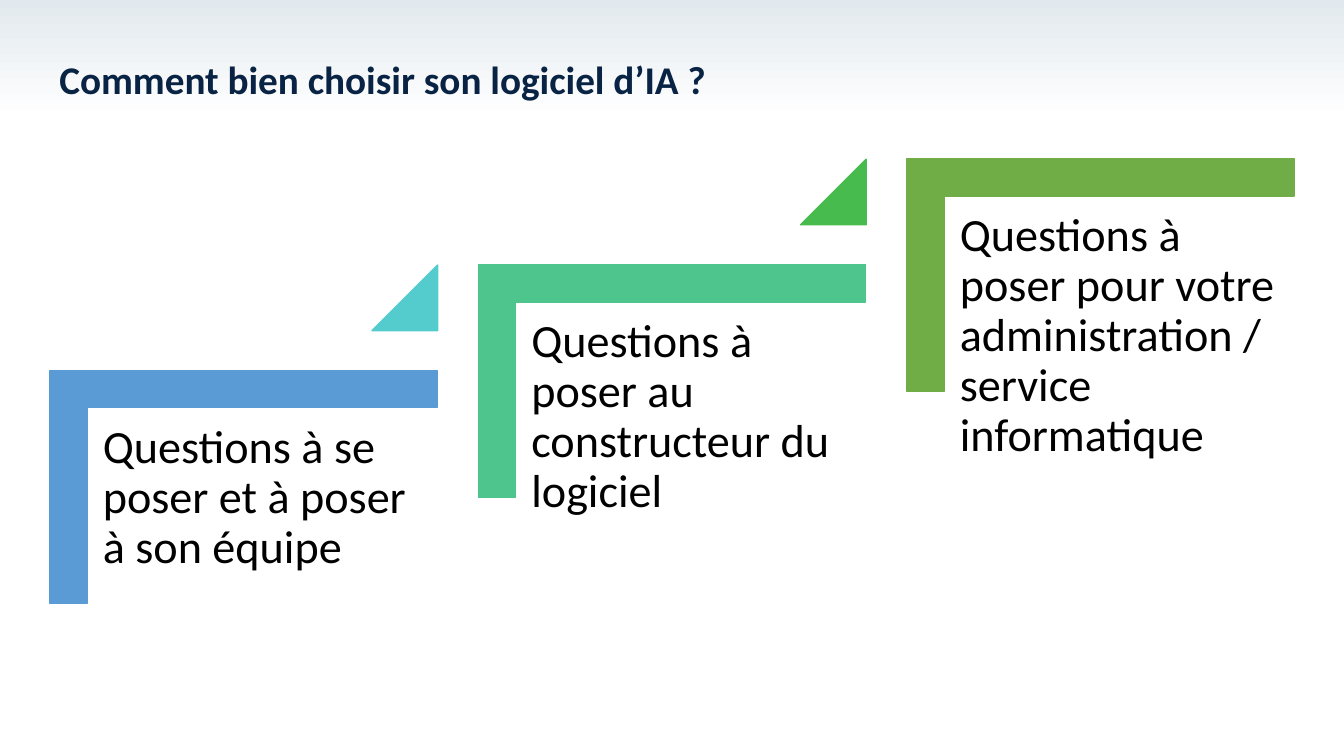
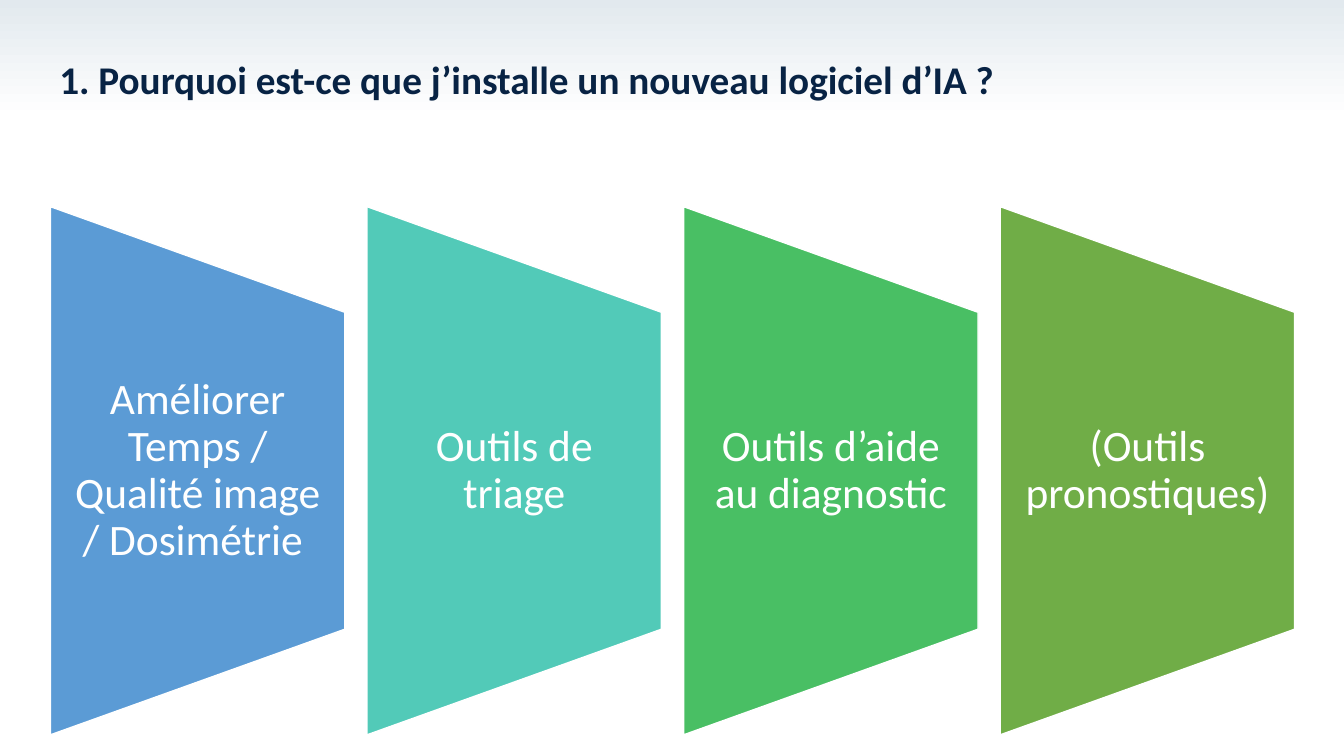
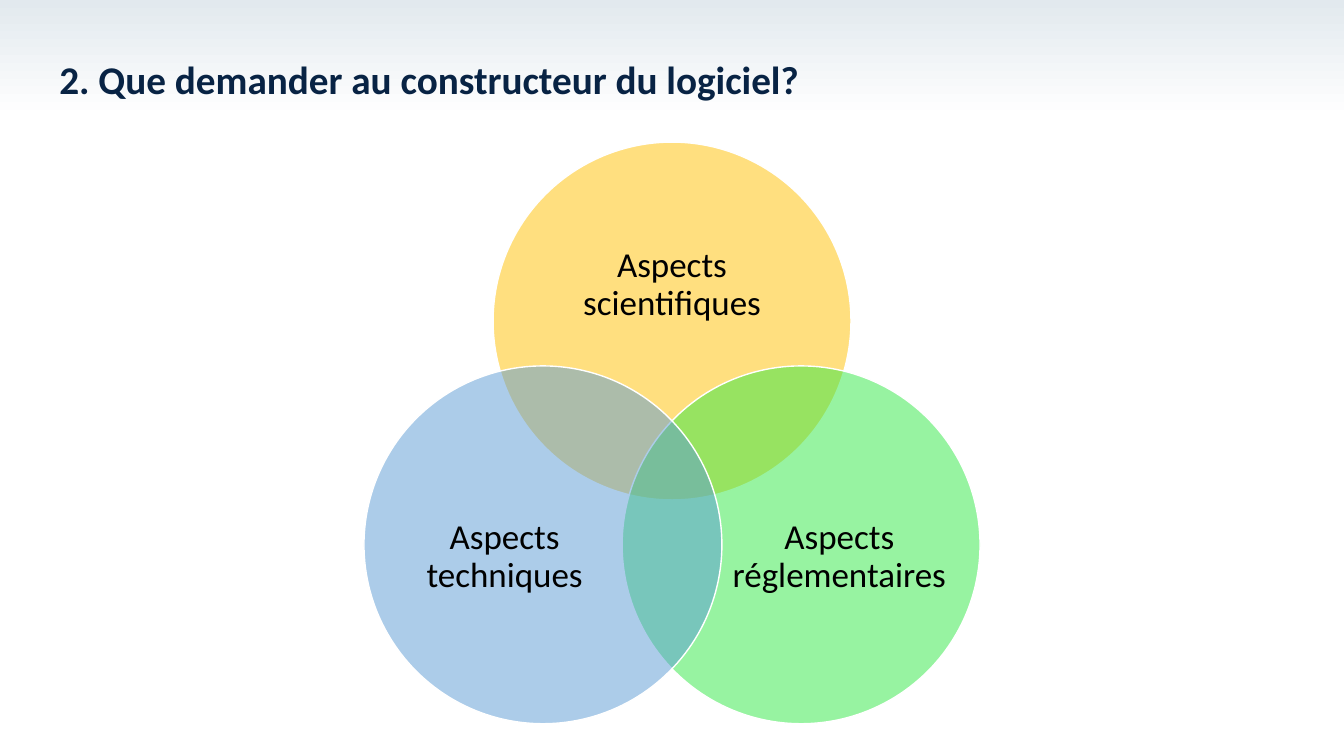
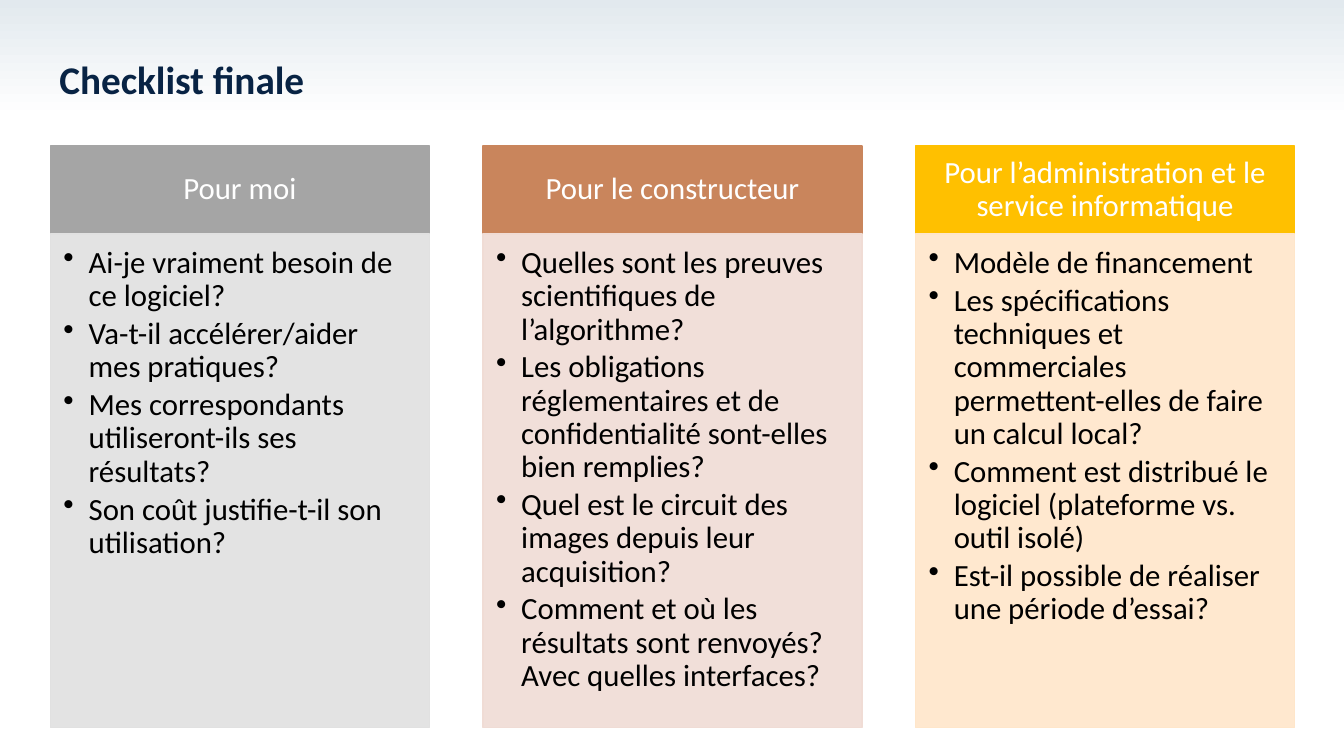
"""Build four slides on choosing AI software."""
from pptx import Presentation
from pptx import util as u
from pptx.dml.color import RGBColor
from pptx.enum import shapes, text
from pptx.oxml import ns, xmlchemy

KIND = shapes.MSO_SHAPE
TOP, MID, LOW = text.MSO_ANCHOR.TOP, text.MSO_ANCHOR.MIDDLE, text.MSO_ANCHOR.BOTTOM
LEFT, CENTER = text.PP_ALIGN.LEFT, text.PP_ALIGN.CENTER
HUE = {
    "navy": "082344", "mist": "E2E9EE", "white": "FFFFFF", "black": "000000",
    "blue": "5B9BD5", "cyan": "54CCCD", "jade": "4DC58D", "leaf": "48BB4F",
    "olive": "70AD47", "teal": "52CAB8", "green": "49BF64", "lime": "30E845",
    "gold": "FFC000", "gray": "A5A5A5", "clay": "C9855C",
    "pale gray": "E1E1E1", "pale clay": "F0DCD5", "pale gold": "FFE6CA",
}
RGB = {name: RGBColor.from_string(code) for name, code in HUE.items()}
SIDES = ("margin_left", "margin_top", "margin_right", "margin_bottom")


def draw(slide, kind, box, fill, line=None, alpha=100, turn=0, adj=()):
    shape = slide.shapes.add_shape(kind, *map(u.Inches, box))
    shape.shadow.inherit = False
    shape.rotation = turn
    for i, value in enumerate(adj):
        shape.adjustments[i] = value
    shape.fill.solid()
    shape.fill.fore_color.rgb = RGB[fill]
    if alpha < 100:
        tint = shape.element.spPr.find(ns.qn("a:solidFill"))[0]
        tint.append(xmlchemy.OxmlElement("a:alpha"))
        tint[0].set("val", str(alpha * 1000))
    shape.line.color.rgb = RGB[line or fill]
    shape.line.width = u.Pt(1)
    return shape


def write(slide, box, lines, size, hue="black", anchor=MID, align=CENTER,
          pad=(0, 0, 0, 0), bold=False, bullet=False):
    frame = slide.shapes.add_textbox(*map(u.Inches, box)).text_frame
    look = {"word_wrap": True, "vertical_anchor": anchor, **dict(zip(SIDES, map(u.Inches, pad)))}
    for key, value in look.items():
        setattr(frame, key, value)
    frame.text = "\n".join(lines)
    for para in frame.paragraphs:
        form = {"alignment": align, "line_spacing": 0.9, "space_after": u.Pt(3.3 if bullet else 0)}
        for key, value in form.items():
            setattr(para, key, value)
        for key, value in {"name": "Calibri", "size": u.Pt(size), "bold": bold}.items():
            setattr(para.runs[0].font, key, value)
        para.runs[0].font.color.rgb = RGB[hue]
        if bullet:
            props = para._p.get_or_add_pPr()
            props.set("marL", str(u.Inches(0.25)))
            props.set("indent", str(u.Inches(-0.25)))
            mark = xmlchemy.OxmlElement("a:buChar")
            mark.set("char", "•")
            props.append(mark)


deck = Presentation()
deck.slide_width, deck.slide_height = u.Inches(13.33), u.Inches(7.5)
titles = [
    "Comment bien choisir son logiciel d’IA ?",
    "1. Pourquoi est-ce que j’installe un nouveau logiciel d’IA ?",
    "2. Que demander au constructeur du logiciel?",
    "Checklist finale",
]
pages = []
for title in titles:
    page = deck.slides.add_slide(deck.slide_layouts[6])
    band = draw(page, KIND.RECTANGLE, (0, 0, 13.33, 1.17), "mist")
    band.line.fill.background()
    band.fill.gradient()
    band.fill.gradient_angle = 270
    for stop, hue in zip(band.fill.gradient_stops, ("mist", "white")):
        stop.color.rgb = RGB[hue]
    write(page, (0.49, 0.1, 12.35, 0.97), [title], 28, "navy", LOW, LEFT,
          (0.1, 0.05, 0.1, 0.05), bold=True)
    pages.append(page)
stairs, tools, venn, check = pages

steps = [
    ("Questions à se poser et à poser à son équipe", "blue", "cyan"),
    ("Questions à poser au constructeur du logiciel", "jade", "leaf"),
    ("Questions à poser pour votre administration / service informatique", "olive", None),
]
for i, (words, hue, wedge) in enumerate(steps):
    x, y = 4.25 * i, -1.05 * i
    draw(stairs, KIND.CORNER, (1.26 + x, 2.91 + y, 2.31, 3.84), hue, turn=90, adj=(0.16, 0.16))
    write(stairs, (0.88 + x, 4.06 + y, 3.47, 3.04), [words], 33, anchor=TOP, align=LEFT,
          pad=(0.14,) * 4)
    if wedge:
        draw(stairs, KIND.ISOSCELES_TRIANGLE, (3.69 + x, 2.63 + y, 0.65, 0.65), wedge, adj=(1,))

goals = [
    ("Améliorer Temps / Qualité image / Dosimétrie ", "blue"),
    ("Outils de triage", "teal"),
    ("Outils d’aide au diagnostic", "green"),
    ("(Outils pronostiques)", "olive"),
]
for i, (words, hue) in enumerate(goals):
    x = 0.5 + 3.14 * i
    draw(tools, KIND.FLOWCHART_MANUAL_OPERATION, (x - 1.16, 3.21, 5.24, 2.92), hue, "white", turn=270)
    write(tools, (x, 3.1, 2.92, 3.15), [words], 31, "white", pad=(0.22, 0, 0.22, 0))

fields = [
    ("Aspects scientifiques", "gold", (4.89, 1.41), (5.36, 2.03, 2.61, 1.6)),
    ("Aspects réglementaires", "lime", (6.17, 3.63), (7.26, 4.55, 2.13, 1.95)),
    ("Aspects techniques", "blue", (3.61, 3.63), (3.94, 4.55, 2.13, 1.95)),
]
for words, hue, spot, box in fields:
    draw(venn, KIND.OVAL, (*spot, 3.55, 3.55), hue, "white", alpha=50)
    write(venn, box, [words], 25)

lists = [
    ("Pour moi", "gray", [
        "Ai-je vraiment besoin de ce logiciel?",
        "Va-t-il accélérer/aider mes pratiques?",
        "Mes correspondants utiliseront-ils ses résultats?",
        "Son coût justifie-t-il son utilisation?",
    ]),
    ("Pour le constructeur", "clay", [
        "Quelles sont les preuves scientifiques de l’algorithme?",
        "Les obligations réglementaires et de confidentialité sont-elles bien remplies?",
        "Quel est le circuit des images depuis leur acquisition?",
        "Comment et où les résultats sont renvoyés? Avec quelles interfaces?",
    ]),
    ("Pour l’administration et le service informatique", "gold", [
        "Modèle de financement",
        "Les spécifications techniques et commerciales permettent-elles de faire un calcul local?",
        "Comment est distribué le logiciel (plateforme vs. outil isolé)",
        "Est-il possible de réaliser une période d’essai?",
    ]),
]
for i, (head, hue, items) in enumerate(lists):
    x = 0.5 + 4.29 * i
    top, body = (x, 1.45, 3.76, 0.87), (x, 2.32, 3.76, 4.9)
    draw(check, KIND.RECTANGLE, top, hue)
    write(check, top, [head], 22, "white", pad=(0.17, 0.1, 0.17, 0.1))
    draw(check, KIND.RECTANGLE, body, "pale " + hue, alpha=90)
    write(check, body, items, 22, anchor=TOP, align=LEFT, pad=(0.13, 0.13, 0.17, 0.19), bullet=True)

deck.save("out.pptx")
